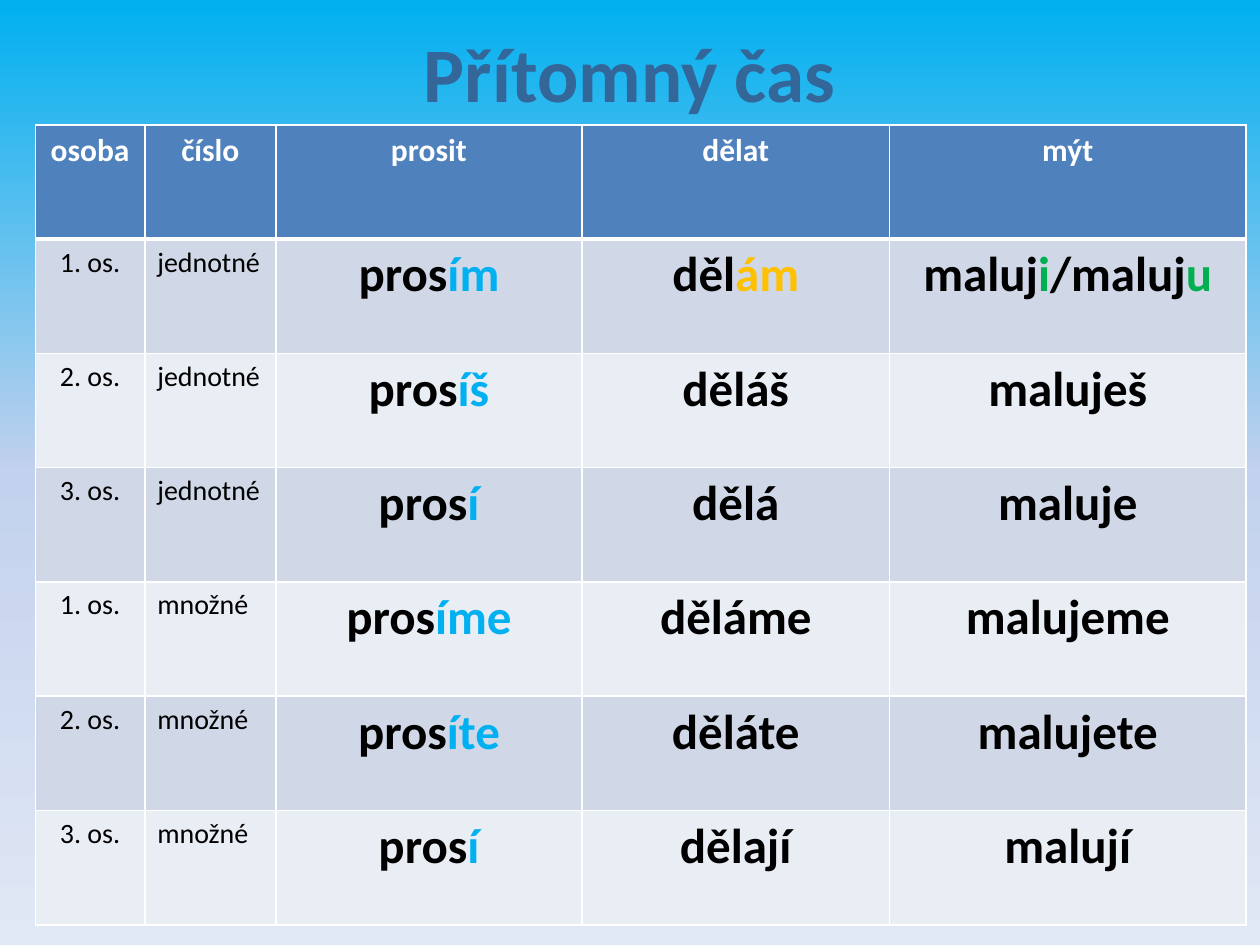
from copy import deepcopy
from dataclasses import dataclass

from lxml.etree import SubElement
from pptx import Presentation
from pptx.dml.color import RGBColor as RGB
from pptx.enum.text import PP_ALIGN as Align
from pptx.oxml.ns import qn
from pptx.util import Inches, Pt


@dataclass(frozen=True)
class Theme:
    font: str = "Calibri"
    title: str = "336699"
    head: str = "4F81BD"
    bands: tuple = ("D0D8E8", "E9EDF4")
    white: str = "FFFFFF"
    black: str = "000000"
    accents: tuple = ("00B0F0", "FFC000", "00B050")  # one per verb
    sky: tuple = ((0, "00B0F0"), (0.5, "C2D1ED"), (1, "E1E8F5"))
    title_size: int = 44
    head_size: int = 18
    label_size: int = 16
    verb_size: int = 28


THEME = Theme()
WIDTHS = (0.87, 1.04, 2.43, 2.44, 2.83)
HEADS = ("osoba", "číslo", "prosit", "dělat", "mýt")
# Every second piece between bars is a highlighted ending
VERBS = (
    ("pros|ím", "děl|ám", "maluj|i|/maluj|u"),
    ("pros|íš", "děláš", "maluješ"),
    ("pros|í", "dělá", "maluje"),
    ("pros|íme", "děláme", "malujeme"),
    ("pros|íte", "děláte", "malujete"),
    ("pros|í", "dělají", "malují"),
)


def write(frame, text, size, color, bold=True, accent=None, align=Align.CENTER):
    para = frame.paragraphs[0]
    para.alignment = align
    for i, piece in enumerate(text.split("|")):
        run = para.add_run()
        run.text = piece
        font = run.font
        font.name, font.size, font.bold = THEME.font, Pt(size), bold
        font.color.rgb = RGB.from_string(accent if i % 2 else color)


def paint_back(slide):
    fill = slide.background.fill
    fill.gradient()
    fill.gradient_angle = 270
    stops = slide.element.find(".//" + qn("a:gsLst"))
    stops.insert(1, deepcopy(stops[0]))
    for stop, (pos, color) in zip(fill.gradient_stops, THEME.sky):
        stop.position = pos
        stop.color.rgb = RGB.from_string(color)


def add_title(slide, left, top, width, height):
    box = slide.shapes.add_textbox(left, top, width, height)
    box.text_frame.word_wrap = True
    write(box.text_frame, "Přítomný čas", THEME.title_size, THEME.title)


def style_cell(cell, color, over=1, under=1):
    # Borders go before the fill in the cell properties
    props = cell._tc.get_or_add_tcPr()
    for side, points in (("L", 1), ("R", 1), ("T", over), ("B", under)):
        line = SubElement(props, qn("a:ln" + side), w=str(Pt(points)))
        solid = SubElement(line, qn("a:solidFill"))
        SubElement(solid, qn("a:srgbClr"), val=THEME.white)
    cell.fill.solid()
    cell.fill.fore_color.rgb = RGB.from_string(color)


def add_verbs(slide, left, top, width, height):
    count = len(VERBS) + 1
    table = slide.shapes.add_table(count, len(HEADS), left, top, width, height).table
    for col, size in zip(table.columns, WIDTHS):
        col.width = Inches(size)

    # Header row
    for c, text in enumerate(HEADS):
        cell = table.cell(0, c)
        style_cell(cell, THEME.head, under=3)
        write(cell.text_frame, text, THEME.head_size, THEME.white)

    # Three persons in the singular, then three in the plural
    for r, verbs in enumerate(VERBS):
        number = "jednotné" if r < 3 else "množné"
        cells = [table.cell(r + 1, c) for c in range(len(HEADS))]
        for cell in cells:
            style_cell(cell, THEME.bands[r % 2], over=1 if r else 3)
        size, ink = THEME.label_size, THEME.black
        write(cells[0].text_frame, f"{r % 3 + 1}. os.", size, ink, False)
        write(cells[1].text_frame, number, size, ink, False, align=Align.LEFT)
        for cell, verb, accent in zip(cells[2:], verbs, THEME.accents):
            write(cell.text_frame, verb, THEME.verb_size, ink, accent=accent)


def main():
    deck = Presentation()
    deck.slide_width, deck.slide_height = Inches(10), Inches(7.5)
    slide = deck.slides.add_slide(deck.slide_layouts[6])
    paint_back(slide)
    add_title(slide, Inches(0.5), Inches(0.15), Inches(9), Inches(0.84))
    add_verbs(slide, Inches(0.28), Inches(0.99), Inches(sum(WIDTHS)), Inches(6.35))
    deck.save("out.pptx")


if __name__ == "__main__":
    main()
